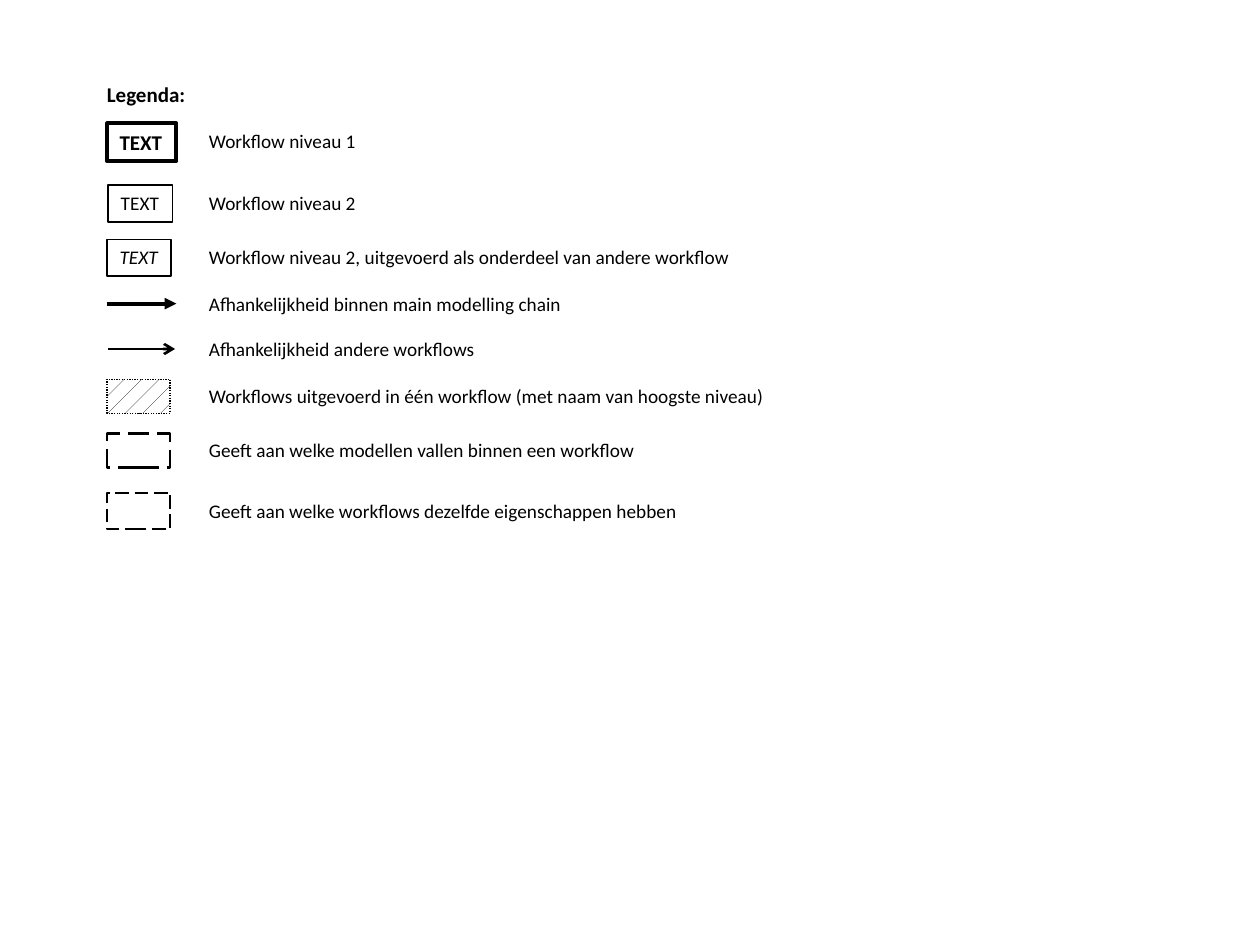
from lxml.etree import SubElement
from pptx import Presentation
from pptx.dml.color import RGBColor
from pptx.enum.dml import MSO_LINE, MSO_PATTERN
from pptx.enum.shapes import MSO_CONNECTOR, MSO_SHAPE
from pptx.enum.text import MSO_ANCHOR, MSO_AUTO_SIZE, PP_ALIGN
from pptx.oxml.ns import qn
from pptx.util import Inches, Pt

BLACK = RGBColor(0, 0, 0)
WHITE = RGBColor(255, 255, 255)
SYMBOL_LEFT = 0.85
LABEL_LEFT = 1.56
LABEL_HEIGHT = 0.29

LABELS = [
    (0.98, 1.38, "Workflow niveau 1"),
    (1.47, 1.38, "Workflow niveau 2"),
    (1.9, 4.34, "Workflow niveau 2, uitgevoerd als onderdeel van andere workflow"),
    (2.27, 3.01, "Afhankelijkheid binnen main modelling chain"),
    (2.63, 2.33, "Afhankelijkheid andere workflows"),
    (3, 4.65, "Workflows uitgevoerd in één workflow (met naam van hoogste niveau)"),
    (3.43, 3.69, "Geeft aan welke modellen vallen binnen een workflow"),
    (3.91, 3.96, "Geeft aan welke workflows dezelfde eigenschappen hebben"),
]


def write_text(shape, text, size=11, **font_values):
    """Put one left-aligned line of black text in a shape."""
    frame = shape.text_frame
    frame.word_wrap = False
    frame.auto_size = MSO_AUTO_SIZE.SHAPE_TO_FIT_TEXT
    frame.vertical_anchor = MSO_ANCHOR.TOP
    paragraph = frame.paragraphs[0]
    paragraph.alignment = PP_ALIGN.LEFT
    run = paragraph.add_run()
    run.text = text
    run.font.color.rgb = BLACK
    values = {"name": "Calibri", "size": Pt(size), **font_values}
    for name, value in values.items():
        setattr(run.font, name, value)


def add_label(slide, left, top, width, height, text, **font_values):
    """Add a text box with one line of text."""
    box = slide.shapes.add_textbox(
        Inches(left), Inches(top), Inches(width), Inches(height))
    write_text(box, text, **font_values)


def add_box(slide, left, top, width, height, line_width, dash=None):
    """Add an unfilled rectangle with a black outline."""
    box = slide.shapes.add_shape(
        MSO_SHAPE.RECTANGLE,
        Inches(left), Inches(top), Inches(width), Inches(height))
    box.shadow.inherit = False
    box.fill.background()
    box.line.color.rgb = BLACK
    box.line.width = Pt(line_width)
    if dash:
        box.line.dash_style = dash
    return box


def add_text_box_symbol(slide, left, top, width, height, line_width, **font_values):
    """Add a white workflow rectangle holding the sample text."""
    box = add_box(slide, left, top, width, height, line_width)
    box.fill.solid()
    box.fill.fore_color.rgb = WHITE
    write_text(box, "TEXT", **font_values)


def add_hatched_box(slide, left, top, width, height):
    """Add a dotted rectangle with a patterned fill."""
    box = add_box(slide, left, top, width, height, 0.75, MSO_LINE.ROUND_DOT)
    box.fill.patterned()
    box.fill.pattern = MSO_PATTERN.PERCENT_5
    box.fill.fore_color.rgb = BLACK
    box.fill.back_color.rgb = WHITE


def add_arrow(slide, start, end, y, line_width, head):
    """Add a horizontal black arrow."""
    arrow = slide.shapes.add_connector(
        MSO_CONNECTOR.STRAIGHT, Inches(start), Inches(y), Inches(end), Inches(y))
    arrow.line.color.rgb = BLACK
    arrow.line.width = Pt(line_width)
    SubElement(arrow.line._get_or_add_ln(), qn("a:tailEnd"), type=head)
    SubElement(arrow._element.spPr, qn("a:effectLst"))


def main():
    """Build the legend slide and save it."""
    presentation = Presentation()
    presentation.slide_width = Inches(10)
    presentation.slide_height = Inches(7.5)
    slide = presentation.slides.add_slide(presentation.slide_layouts[6])

    add_label(slide, 0.75, 0.6, 0.83, 0.3, "Legenda:", size=12, bold=True)
    add_text_box_symbol(slide, SYMBOL_LEFT, 0.98, 0.55, 0.3, 2.25, size=12, bold=True)
    add_text_box_symbol(slide, 0.86, 1.47, 0.51, 0.29, 1)
    add_text_box_symbol(slide, SYMBOL_LEFT, 1.9, 0.51, 0.29, 1, italic=True)
    add_arrow(slide, SYMBOL_LEFT, 1.4, 2.41, 2.25, "triangle")
    add_arrow(slide, 0.86, 1.39, 2.77, 1.5, "arrow")
    add_hatched_box(slide, SYMBOL_LEFT, 3.01, 0.5, 0.27)
    add_box(slide, SYMBOL_LEFT, 3.44, 0.5, 0.27, 1.5, MSO_LINE.LONG_DASH)
    add_box(slide, SYMBOL_LEFT, 3.91, 0.5, 0.29, 1, MSO_LINE.LONG_DASH)
    for top, width, text in LABELS:
        add_label(slide, LABEL_LEFT, top, width, LABEL_HEIGHT, text)

    presentation.save("out.pptx")


if __name__ == "__main__":
    main()
